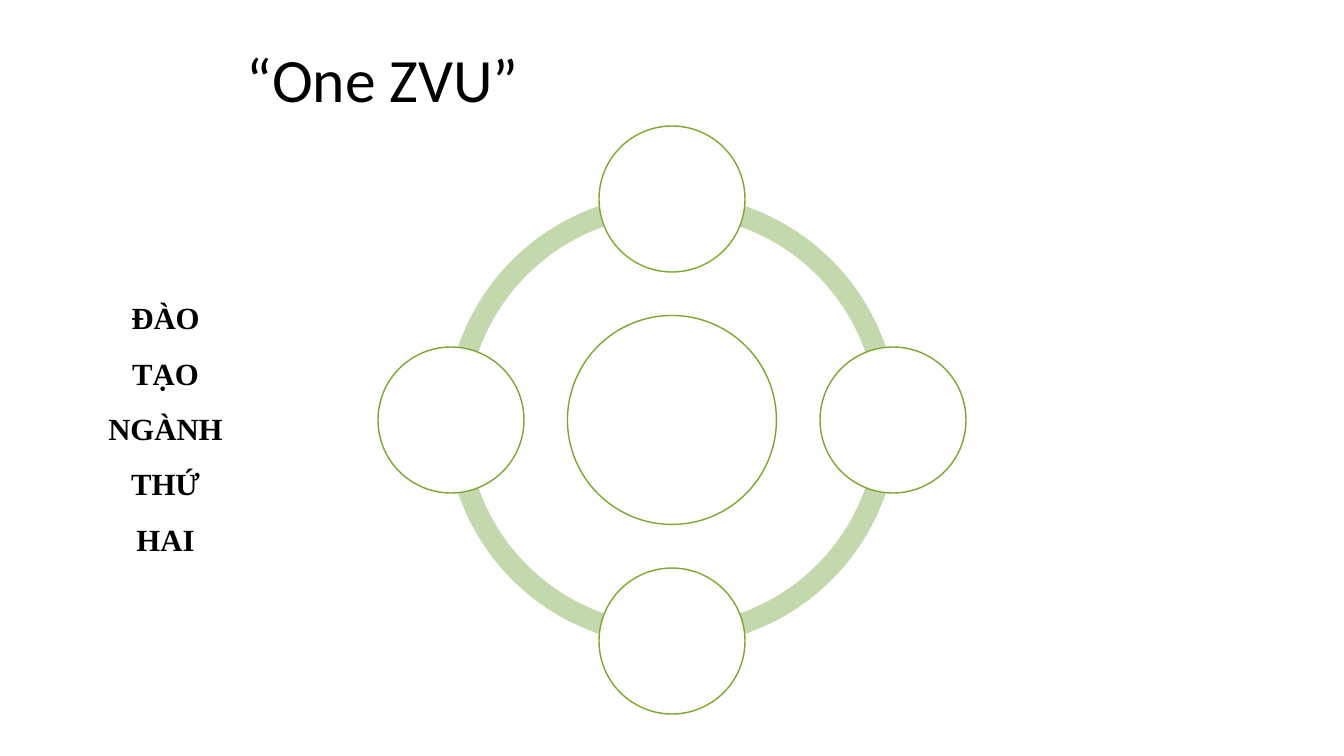
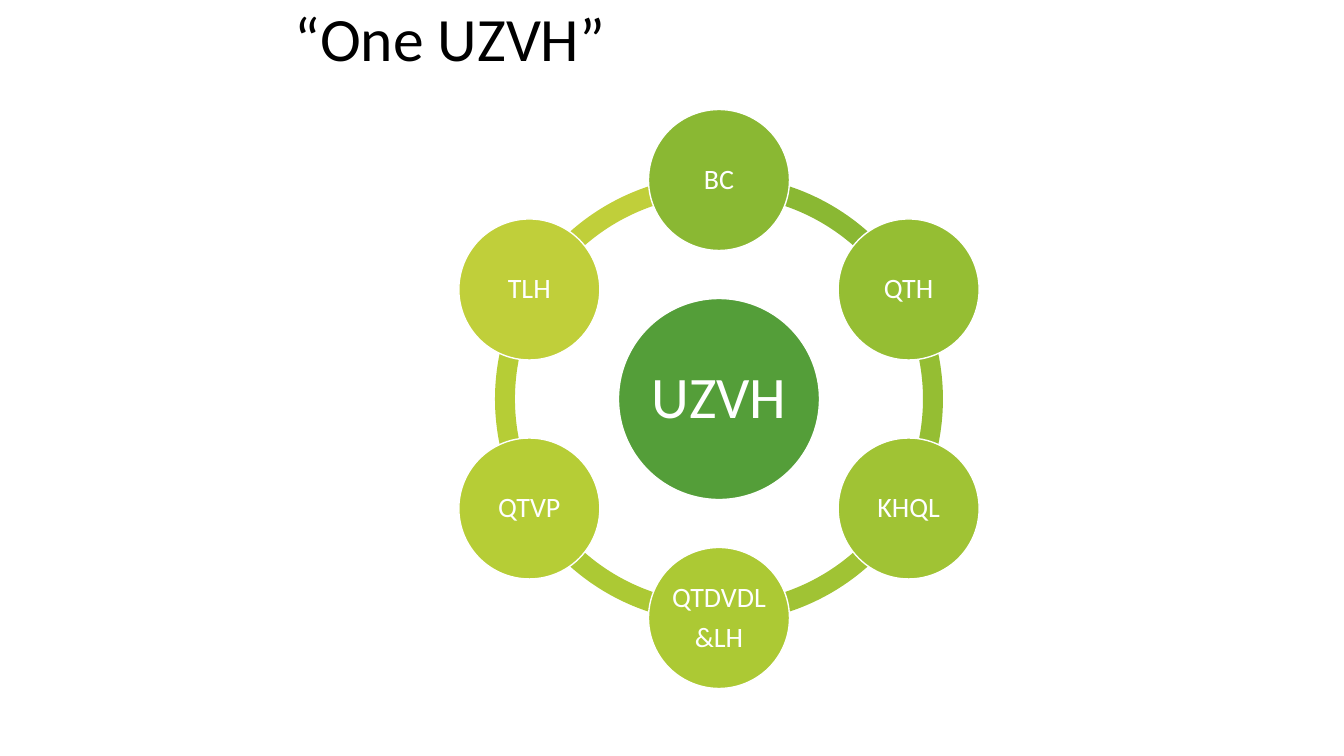
from dataclasses import dataclass
from math import cos, radians, sin

from pptx import Presentation
from pptx.dml.color import RGBColor
from pptx.enum.shapes import MSO_SHAPE
from pptx.enum.text import MSO_ANCHOR, PP_ALIGN
from pptx.util import Emu, Pt

BLOCK_ARC = MSO_SHAPE.BLOCK_ARC
OVAL = MSO_SHAPE.OVAL
MIDDLE = MSO_ANCHOR.MIDDLE
LEFT, CENTER = PP_ALIGN.LEFT, PP_ALIGN.CENTER

EMU_PER_PX = 914400 / 100.8
SLIDE_SIZE = (1344, 756)
TOP_ANGLE = 270
ARC_UNITS_PER_DEGREE = 0.6


@dataclass(frozen=True)
class Theme:
    heading_font: str = "Calibri"
    side_font: str = "Times New Roman"
    text: str = "000000"
    white: str = "FFFFFF"
    outline: str = "7DA72E"
    pale_arc: str = "C4D8AE"
    hub: str = "549E39"
    node_greens: tuple = ("8AB833", "95BE33", "A0C334", "ACC934", "B6CD36", "C0CF3A")
    title_size: int = 44
    hub_size: int = 42
    node_size: int = 20
    side_size: int = 22
    line_width: int = 1


THEME = Theme()


@dataclass(frozen=True)
class Node:
    label: str
    fill: str
    arc_fill: str


@dataclass(frozen=True)
class Ring:
    """Diameters, the orbit radius and the band thickness are in px."""
    hub: int
    node: int
    orbit: int
    band: int
    outline: str


def px(length):
    return Emu(round(length * EMU_PER_PX))


def rgb(code):
    return RGBColor.from_string(code)


def apply_format(target, values):
    for name, value in values.items():
        setattr(target, name, value)


def write_text(frame, text, font, color, align, inset=None, **spacing):
    """Fill a frame with one paragraph for each line of text."""
    apply_format(frame, {"word_wrap": True, "vertical_anchor": MIDDLE})
    if inset is not None:
        sides = ("left", "top", "right", "bottom")
        apply_format(frame, {f"margin_{side}": px(inset) for side in sides})
    for index, line in enumerate(text.split("\n")):
        paragraph = frame.add_paragraph() if index else frame.paragraphs[0]
        apply_format(paragraph, {"alignment": align, **spacing})
        if index:
            paragraph.space_before = Pt(font["size"].pt * 0.35)
        run = paragraph.add_run()
        run.text = line
        apply_format(run.font, font)
        run.font.color.rgb = rgb(color)


def add_text_box(slide, box, text, font, align, **spacing):
    shape = slide.shapes.add_textbox(*map(px, box))
    write_text(shape.text_frame, text, font, THEME.text, align, **spacing)


def add_title(slide, box, text):
    font = {"name": THEME.heading_font, "size": Pt(THEME.title_size)}
    add_text_box(slide, box, text, font, LEFT, line_spacing=0.9)


def add_side_label(slide, box, text):
    font = {"name": THEME.side_font, "size": Pt(THEME.side_size), "bold": True}
    add_text_box(slide, box, text, font, CENTER, line_spacing=1.5,
                 space_before=Pt(6), space_after=Pt(6))


def add_filled_shape(slide, kind, center, diameter, fill):
    left, top = (middle - diameter / 2 for middle in center)
    shape = slide.shapes.add_shape(kind, *map(px, (left, top, diameter, diameter)))
    shape.shadow.inherit = False
    shape.fill.solid()
    shape.fill.fore_color.rgb = rgb(fill)
    return shape


def add_circle(slide, center, diameter, fill, outline, label, size):
    circle = add_filled_shape(slide, OVAL, center, diameter, fill)
    circle.line.color.rgb = rgb(outline)
    circle.line.width = Pt(THEME.line_width)
    if label:
        font = {"name": THEME.heading_font, "size": Pt(size)}
        write_text(circle.text_frame, label, font, THEME.white, CENTER,
                   inset=0, line_spacing=0.9)


def add_arc(slide, center, diameter, band, start, end, fill):
    arc = add_filled_shape(slide, BLOCK_ARC, center, diameter, fill)
    arc.line.fill.background()
    arc.adjustments[0] = start % 360 * ARC_UNITS_PER_DEGREE
    arc.adjustments[1] = end % 360 * ARC_UNITS_PER_DEGREE
    arc.adjustments[2] = band / diameter


def add_radial_cycle(slide, box, ring, hub_label, hub_fill, nodes):
    """Draw a hub inside a ring of nodes; box bounds the arcs of the ring."""
    left, top, diameter = box
    center = (left + diameter / 2, top + diameter / 2)
    step = 360 / len(nodes)
    angles = [TOP_ANGLE + index * step for index in range(len(nodes))]
    for angle, node in zip(angles, nodes):
        add_arc(slide, center, diameter, ring.band, angle, angle + step, node.arc_fill)
    add_circle(slide, center, ring.hub, hub_fill, ring.outline,
               hub_label, THEME.hub_size)
    for angle, node in zip(angles, nodes):
        spot = (center[0] + ring.orbit * cos(radians(angle)),
                center[1] + ring.orbit * sin(radians(angle)))
        add_circle(slide, spot, ring.node, node.fill, ring.outline,
                   node.label, THEME.node_size)


def build_university_slide(slide):
    add_title(slide, (237, 40, 869, 86), "“One ZVU”")
    ring = Ring(hub=209, node=146, orbit=221, band=21, outline=THEME.outline)
    nodes = [Node("", THEME.white, THEME.pale_arc)] * 4
    add_radial_cycle(slide, (446, 194, 452), ring, "", THEME.white, nodes)
    add_side_label(slide, (94, 254, 143, 330), "ĐÀO TẠO NGÀNH THỨ HAI")


def build_faculties_slide(slide):
    add_title(slide, (285, 0, 827, 84), "“One UZVH”")
    ring = Ring(hub=201, node=141, orbit=219, band=20, outline=THEME.white)
    labels = ("BC", "QTH", "KHQL", "QTDVDL\n&LH", "QTVP", "TLH")
    nodes = [Node(label, green, green)
             for label, green in zip(labels, THEME.node_greens)]
    add_radial_cycle(slide, (495, 175, 448), ring, "UZVH", THEME.hub, nodes)


def main():
    presentation = Presentation()
    width, height = map(px, SLIDE_SIZE)
    apply_format(presentation, {"slide_width": width, "slide_height": height})
    blank_layout = presentation.slide_layouts[6]
    for build in (build_university_slide, build_faculties_slide):
        build(presentation.slides.add_slide(blank_layout))
    presentation.save("out.pptx")


if __name__ == "__main__":
    main()
